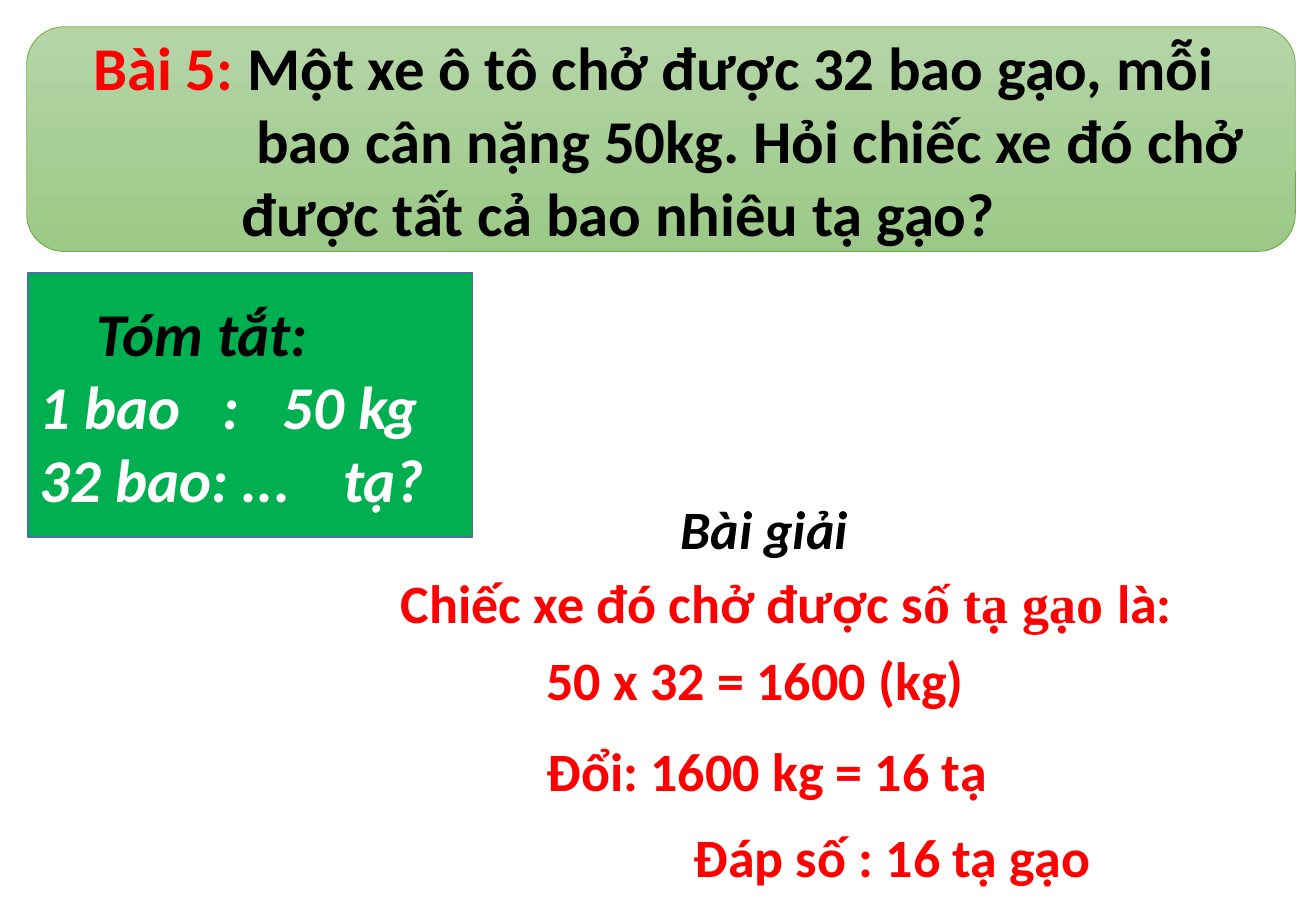
from dataclasses import dataclass

from lxml.etree import SubElement as Sub
from pptx import Presentation
from pptx.dml.color import RGBColor as Rgb
from pptx.enum.shapes import MSO_SHAPE as Form
from pptx.enum.text import MSO_ANCHOR as Anchor, MSO_AUTO_SIZE as Auto, PP_ALIGN as Align
from pptx.oxml.ns import qn
from pptx.util import Inches, Pt

HEX = {
    "red": "FF0000", "black": "000000", "white": "FFFFFF",
    "green": "00B050", "blue": "43739E",
    "pale": "B5D5A7", "leaf": "9CC987", "edge": "70AD47",
}


@dataclass(frozen=True)
class Run:
    text: str
    color: str = "red"
    face: str = "Calibri"


@dataclass(frozen=True)
class Line:
    runs: tuple[Run, ...]
    indent: float = 0
    tabs: tuple[float, ...] = ()


@dataclass(frozen=True)
class Step:
    left: float
    top: float
    width: float
    runs: tuple[Run, ...]
    italic: bool = False


def hue(name: str) -> Rgb:
    return Rgb.from_string(HEX[name])


def write(frame, lines: tuple[Line, ...], *, size: int = 32, italic: bool = False,
          anchor=Anchor.TOP) -> None:
    """Fill a text frame with bold lines, each with its indent and tab stops."""
    frame.word_wrap = True
    frame.vertical_anchor = anchor
    for n, line in enumerate(lines):
        para = frame.add_paragraph() if n else frame.paragraphs[0]
        para.alignment = Align.LEFT
        props = para._p.get_or_add_pPr()
        props.set("marL", str(Inches(line.indent)))
        props.set("indent", "0")
        if line.tabs:
            stops = Sub(props, qn("a:tabLst"))
            for stop in line.tabs:
                Sub(stops, qn("a:tab"), pos=str(Inches(stop)), algn="l")
        for part in line.runs:
            run = para.add_run()
            run.text = part.text
            font = run.font
            font.name, font.size = part.face, Pt(size)
            font.bold, font.italic = True, italic
            font.color.rgb = hue(part.color)


def panel(slide, form, box: tuple[float, ...], edge: str, weight: float):
    """Add an outlined shape without shadow."""
    shape = slide.shapes.add_shape(form, *map(Inches, box))
    shape.shadow.inherit = False
    shape.line.color.rgb = hue(edge)
    shape.line.width = Pt(weight)
    return shape


TASK = (
    Line((Run("Bài 5: "), Run("Một xe ô tô chở được 32 bao gạo, mỗi", "black")), 0.36),
    Line((Run("bao cân nặng 50kg. Hỏi chiếc xe đó chở", "black"),), 1.7),
    Line((Run("được tất cả bao nhiêu tạ gạo?", "black"),), 1.58),
)
BRIEF = (
    Line((Run("Tóm tắt:", "black"),), 0.47),
    Line((Run("1 bao\t:\t50 kg", "white"),), tabs=(1.51, 1.87)),
    Line((Run("32 bao: ...\ttạ?", "white"),), tabs=(2.29,)),
)
STEPS = (
    Step(5.5, 4.03, 1.85, (Run("Bài giải", "black"),), True),
    Step(3.2, 4.64, 6.88, (Run("Chiếc xe đó chở được s"),
                           Run("ố tạ gạo ", face="Times New Roman"), Run("là:"))),
    Step(4.4, 5.27, 4.41, (Run("50 x 32 = 1600 (kg)"),)),
    Step(4.4, 6.02, 6.4, (Run("Đổi: 1600 kg = 16 tạ"),)),
    Step(5.61, 6.73, 3.71, (Run("Đáp số : 16 tạ gạo"),)),
)


def main() -> None:
    deck = Presentation()
    deck.slide_width, deck.slide_height = Inches(10.83), Inches(7.5)
    slide = deck.slides.add_slide(deck.slide_layouts[6])

    # Problem statement
    task = panel(slide, Form.ROUNDED_RECTANGLE, (0.22, 0.22, 10.44, 1.85), "edge", 0.5)
    task.fill.gradient()
    task.fill.gradient_angle = 270
    for stop, name in zip(task.fill.gradient_stops, ("pale", "leaf")):
        stop.color.rgb = hue(name)
    task.text_frame.margin_right = 0
    write(task.text_frame, TASK, size=36, anchor=Anchor.MIDDLE)

    # Summary
    brief = panel(slide, Form.RECTANGLE, (0.23, 2.25, 3.66, 2.17), "blue", 1)
    brief.fill.solid()
    brief.fill.fore_color.rgb = hue("green")
    write(brief.text_frame, BRIEF, size=36, italic=True, anchor=Anchor.MIDDLE)

    # Solution steps
    for step in STEPS:
        box = slide.shapes.add_textbox(
            *map(Inches, (step.left, step.top, step.width, 0.64)))
        write(box.text_frame, (Line(step.runs),), italic=step.italic)
        box.text_frame.auto_size = Auto.SHAPE_TO_FIT_TEXT

    deck.save("out.pptx")


if __name__ == "__main__":
    main()
